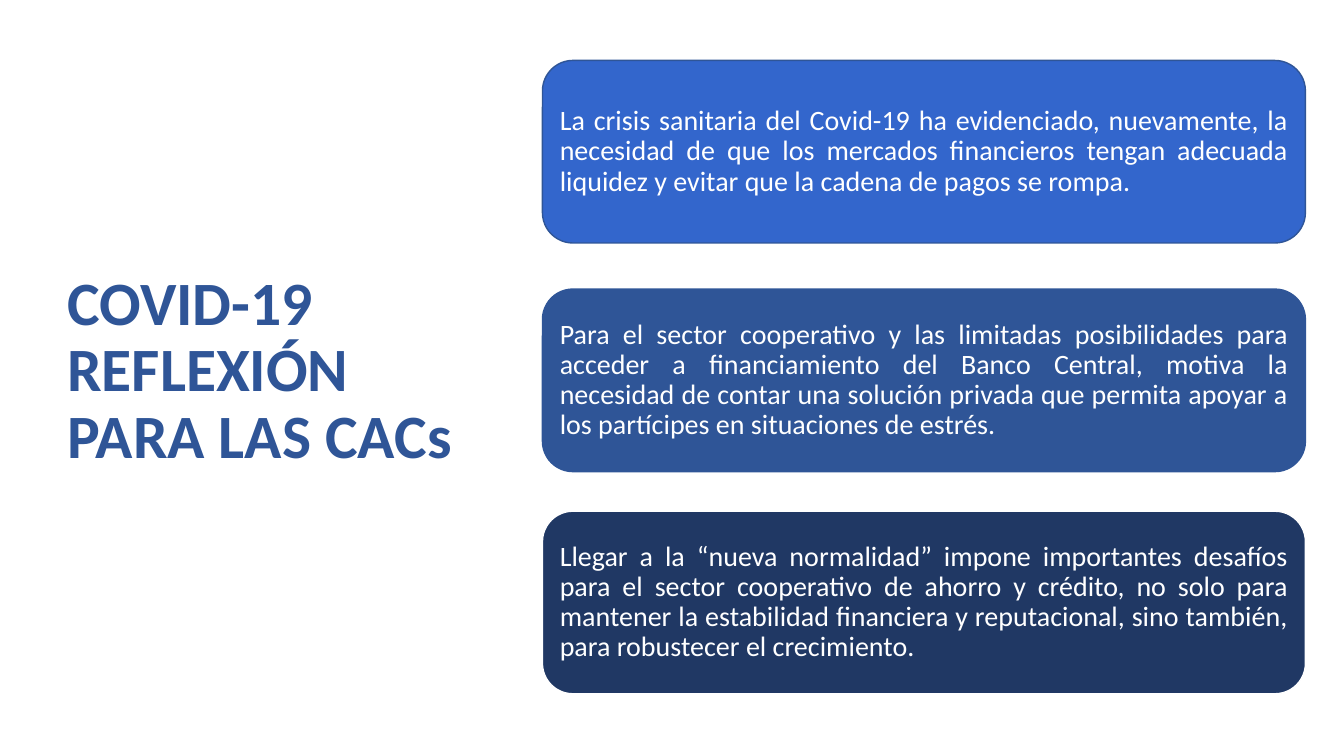
from dataclasses import dataclass

from pptx import Presentation
from pptx.dml.color import RGBColor
from pptx.enum import shapes, text
from pptx.slide import Slide
from pptx.text.text import TextFrame
from pptx.util import Pt


@dataclass(frozen=True)
class Theme:
    font: str = "Calibri"
    title_size: float = 44
    body_size: float = 20
    white: str = "FFFFFF"
    bright: str = "3366CC"
    blue: str = "2F5597"
    navy: str = "203864"


@dataclass(frozen=True)
class Card:
    top: float
    fill: str
    line: str
    body: str


THEME = Theme()
CARD_LEFT, CARD_WIDTH, CARD_HEIGHT, CARD_INSET = 387.5, 545, 130.4, 6

TITLE = "COVID-19\vREFLEXIÓN\vPARA LAS CACs"
CARDS = [
    Card(43.2, THEME.bright, THEME.blue,
         "La crisis sanitaria del Covid-19 ha evidenciado, nuevamente, la necesidad de que "
         "los mercados financieros tengan adecuada liquidez y evitar que la cadena de pagos "
         "se rompa."),
    Card(206.5, THEME.blue, THEME.blue,
         "Para el sector cooperativo y las limitadas posibilidades para acceder a "
         "financiamiento del Banco Central, motiva la necesidad de contar una solución "
         "privada que permita apoyar a los partícipes en situaciones de estrés."),
    Card(365.2, THEME.navy, THEME.white,
         "Llegar a la “nueva normalidad” impone importantes desafíos para el sector "
         "cooperativo de ahorro y crédito, no solo para mantener la estabilidad financiera "
         "y reputacional, sino también, para robustecer el crecimiento."),
]


def write(tf: TextFrame, content: str, size: float, color: str,
          align: text.PP_ALIGN, bold: bool = False) -> None:
    """Fill a frame with one vertically centred, tightly spaced paragraph."""
    tf.word_wrap = True
    tf.vertical_anchor = text.MSO_ANCHOR.MIDDLE
    tf.text = content
    p = tf.paragraphs[0]
    p.alignment = align
    p.line_spacing = 0.9
    for r in p.runs:
        r.font.name = THEME.font
        r.font.size = Pt(size)
        r.font.bold = bold
        r.font.color.rgb = RGBColor.from_string(color)


def add_title(s: Slide) -> None:
    sp = s.shapes.add_textbox(Pt(41), Pt(49), Pt(304.6), Pt(433.4))
    write(sp.text_frame, TITLE, THEME.title_size, THEME.blue, text.PP_ALIGN.LEFT, bold=True)


def add_card(s: Slide, card: Card) -> None:
    sp = s.shapes.add_shape(shapes.MSO_SHAPE.ROUNDED_RECTANGLE, Pt(CARD_LEFT), Pt(card.top),
                            Pt(CARD_WIDTH), Pt(CARD_HEIGHT))
    sp.shadow.inherit = False
    sp.fill.solid()
    sp.fill.fore_color.rgb = RGBColor.from_string(card.fill)
    sp.line.color.rgb = RGBColor.from_string(card.line)
    sp.line.width = Pt(1)
    tf = sp.text_frame
    tf.margin_left = tf.margin_right = tf.margin_top = tf.margin_bottom = Pt(CARD_INSET)
    write(tf, card.body, THEME.body_size, THEME.white, text.PP_ALIGN.JUSTIFY)


def main() -> None:
    prs = Presentation()
    prs.slide_width, prs.slide_height = Pt(960), Pt(540)
    s = prs.slides.add_slide(prs.slide_layouts[6])
    add_title(s)
    for card in CARDS:
        add_card(s, card)
    prs.save("out.pptx")


if __name__ == "__main__":
    main()
